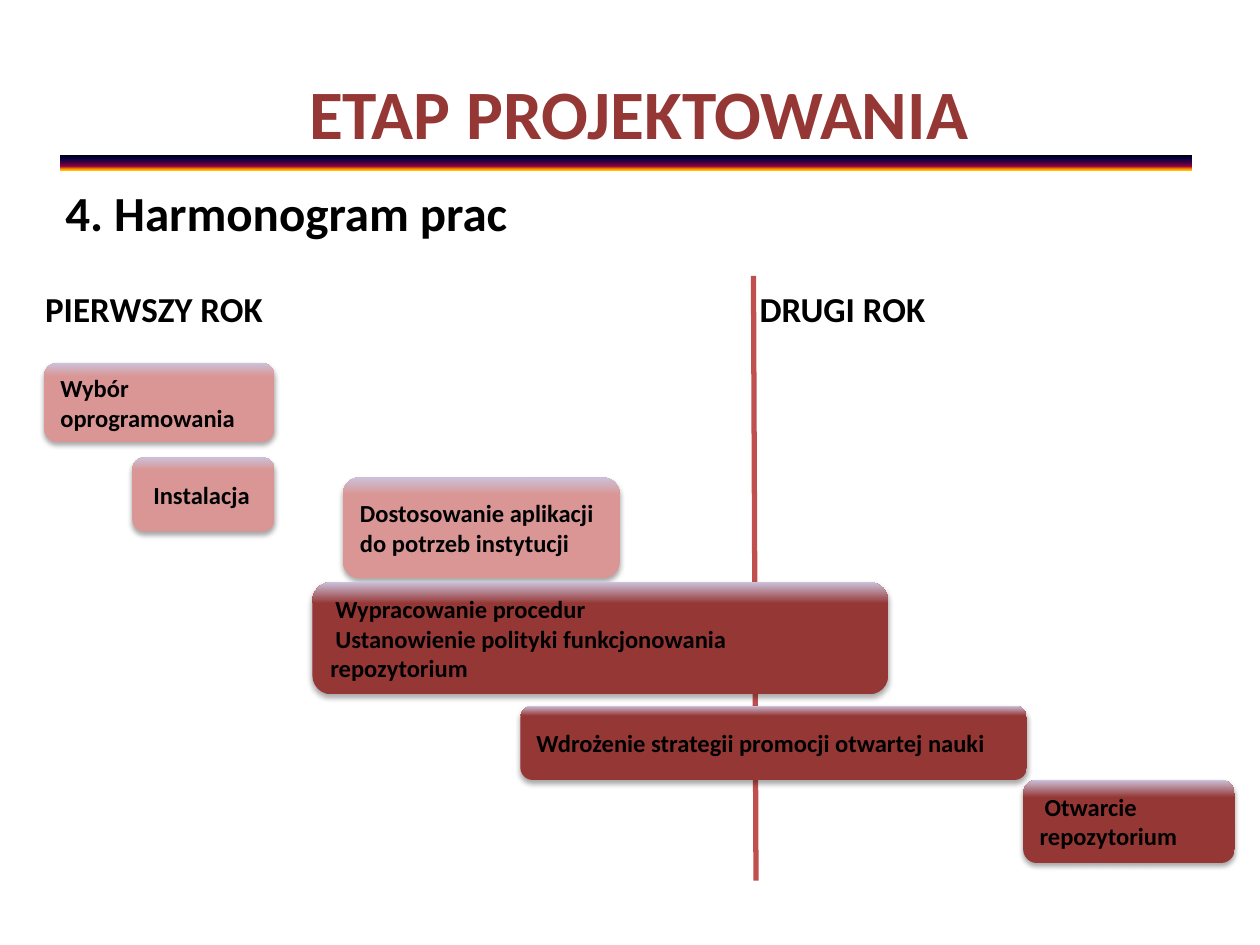
"""Build the project schedule slide with its two-year timeline."""
from pptx import Presentation
from pptx.dml.color import RGBColor
from pptx.enum.shapes import MSO_CONNECTOR, MSO_SHAPE
from pptx.enum.text import MSO_ANCHOR, PP_ALIGN
from pptx.oxml import parse_xml
from pptx.oxml.ns import nsdecls, qn
from pptx.util import Inches, Pt


def color(value):
    return RGBColor.from_string(value)


def write(box, lines, size, ink="000000", indent=0, **formats):
    frame = box.text_frame
    settings = {"word_wrap": True, "vertical_anchor": MSO_ANCHOR.TOP, **formats}
    for name, value in settings.items():
        setattr(frame, name, value)
    for index, line in enumerate(lines):
        para = frame.add_paragraph() if index else frame.paragraphs[0]
        para.alignment = PP_ALIGN.LEFT
        para._p.get_or_add_pPr().set("indent", str(Inches(indent)))
        span = para.add_run()
        span.text = line
        for name, value in {"name": "Calibri", "size": Pt(size), "bold": True}.items():
            setattr(span.font, name, value)
        span.font.color.rgb = color(ink)
    return frame.paragraphs[0]


deck = Presentation()
deck.slide_width, deck.slide_height = Inches(10), Inches(7.5)
page = deck.slides.add_slide(deck.slide_layouts[6])

divider = page.shapes.add_connector(
    MSO_CONNECTOR.STRAIGHT, Inches(5.98), Inches(2.19), Inches(6), Inches(6.99))
divider.line.color.rgb = color("C0504D")
divider.line.width = Pt(3)
divider._element.spPr.append(parse_xml(f"<a:effectLst {nsdecls('a')}/>"))

title = page.shapes.add_textbox(Inches(0.57), Inches(0.49), Inches(9), Inches(1.25))
heading = write(title, ["ETAP PROJEKTOWANIA"], 39.6, "953735",
                vertical_anchor=MSO_ANCHOR.MIDDLE, margin_bottom=Inches(0.51))
heading.alignment = PP_ALIGN.CENTER

for left, year in [(0.26, "PIERWSZY ROK"), (5.93, "DRUGI ROK")]:
    label = page.shapes.add_textbox(Inches(left), Inches(2.23), Inches(2.9), Inches(0.44))
    write(label, [year], 20)

pink, red, lavender = "D99694", "953735", "CCC1DA"
tasks = [
    (1.05, 3.63, 1.13, 0.59, pink, 83, 0.04, ["Instalacja"]),
    (0.35, 2.88, 1.83, 0.63, pink, 83, 0, ["Wybór oprogramowania"]),
    (4.13, 5.6, 4.02, 0.59, red, 86, 0, ["Wdrożenie strategii promocji otwartej nauki"]),
    (2.72, 3.79, 2.2, 0.8, pink, 83, 0, ["Dostosowanie aplikacji do potrzeb instytucji"]),
    (2.48, 4.62, 4.57, 0.89, red, 81, 0.04,
     ["Wypracowanie procedur", "Ustanowienie polityki funkcjonowania repozytorium"]),
    (8.12, 6.19, 1.68, 0.66, red, 79, 0.04, ["Otwarcie repozytorium"]),
]
bars = [(MSO_SHAPE.ROUNDED_RECTANGLE, task[:4], [(task[5], task[4]), (100, lavender)],
         90, task[6], task[7]) for task in tasks]
rule_stops = [(0, "000000"), (20, "000040"), (50, "400040"),
              (75, "8F0040"), (90, "F27300"), (100, "FFBF00")]
bars.append((MSO_SHAPE.RECTANGLE, (0.48, 1.23, 8.98, 0.12), rule_stops, 270, 0, []))

for kind, place, stops, angle, indent, lines in bars:
    bar = page.shapes.add_shape(kind, *[Inches(length) for length in place])
    bar.shadow.inherit = False
    bar.line.fill.background()
    bar.fill.gradient()
    bar.fill.gradient_angle = angle
    properties = bar._element.spPr
    stop_list = properties.find(qn("a:gradFill")).find(qn("a:gsLst"))
    for stop in list(stop_list):
        stop_list.remove(stop)
    for position, shade in stops:
        stop_list.append(parse_xml(
            f'<a:gs {nsdecls("a")} pos="{position * 1000}"><a:srgbClr val="{shade}"/></a:gs>'))
    if lines:
        properties.find(qn("a:effectLst")).append(parse_xml(
            f'<a:outerShdw {nsdecls("a")} blurRad="{Pt(3.1)}" dist="{Pt(1.8)}" dir="5400000"'
            ' rotWithShape="0"><a:srgbClr val="000000"><a:alpha val="35000"/></a:srgbClr>'
            '</a:outerShdw>'))
        write(bar, lines, 14, indent=indent, vertical_anchor=MSO_ANCHOR.MIDDLE,
              margin_right=Inches(0.14))

subtitle = page.shapes.add_textbox(Inches(0.42), Inches(1.4), Inches(4.14), Inches(1.04))
write(subtitle, ["4. Harmonogram prac"], 28)

deck.save("out.pptx")
